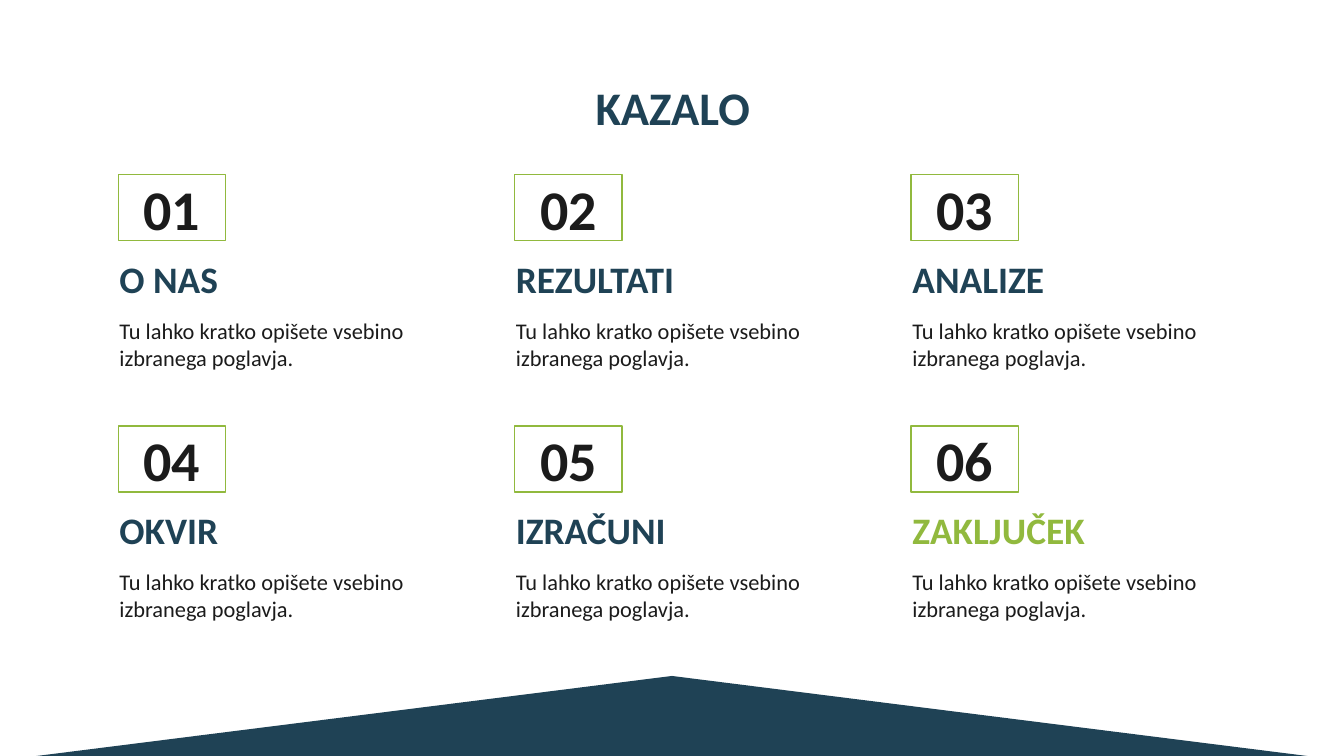
from pptx import Presentation
from pptx.dml.color import RGBColor
from pptx.enum.shapes import MSO_SHAPE as Shape
from pptx.enum.text import MSO_ANCHOR as Anchor, MSO_AUTO_SIZE as AutoSize, PP_ALIGN as Align
from pptx.util import Inches, Pt

COLORS = {"navy": "1F4255", "green": "91B93E", "ink": "1B1B1B"}
FONT = "Calibri"
TITLE = "KAZALO"
SUMMARY = "Tu lahko kratko opišete vsebino izbranega poglavja."
CHAPTERS = [
    ("O NAS", "navy"),
    ("REZULTATI", "navy"),
    ("ANALIZE", "navy"),
    ("OKVIR", "navy"),
    ("IZRAČUNI", "navy"),
    ("ZAKLJUČEK", "green"),
]
COLUMNS = 3
LEFT, COLUMN_STEP, COLUMN_WIDTH = 0.79, 2.95, 2.52
TOP, ROW_STEP = 1.3, 1.87
HEADING_OFFSET, SUMMARY_OFFSET = 0.61, 0.96


def color(name):
    return RGBColor.from_string(COLORS[name])


def write(shape, text, size, ink, bold=False, align=Align.LEFT, anchor=Anchor.TOP):
    frame = shape.text_frame
    frame.text = text
    frame.word_wrap = True
    frame.auto_size = AutoSize.NONE
    frame.vertical_anchor = anchor
    frame.margin_left = frame.margin_right = Inches(0.1)
    frame.margin_top = frame.margin_bottom = Inches(0.1)
    para = frame.paragraphs[0]
    para.alignment = align
    font = para.runs[0].font
    font.name, font.size, font.bold = FONT, Pt(size), bold
    font.color.rgb = color(ink)


def add_text(page, left, top, width, height, *args, **style):
    box = page.shapes.add_textbox(Inches(left), Inches(top), Inches(width), Inches(height))
    write(box, *args, **style)


def add_peak(page):
    peak = page.shapes.add_shape(
        Shape.ISOSCELES_TRIANGLE, 0, Inches(5.03), Inches(10), Inches(0.63))
    peak.shadow.inherit = False
    peak.fill.solid()
    peak.fill.fore_color.rgb = color("navy")
    peak.line.fill.background()


def add_title(page):
    title = page.shapes.title
    title.left, title.top = Inches(0.79), Inches(0.49)
    title.width, title.height = Inches(8.43), Inches(0.63)
    write(title, TITLE, 25, "navy", bold=True, align=Align.CENTER)


def add_number(page, left, top, number):
    frame = page.shapes.add_shape(
        Shape.RECTANGLE, Inches(left), Inches(top), Inches(0.8), Inches(0.49))
    frame.shadow.inherit = False
    frame.fill.background()
    frame.line.color.rgb = color("green")
    frame.line.width = Pt(0.75)
    write(frame, f"{number:02d}", 30, "ink", bold=True,
          align=Align.CENTER, anchor=Anchor.MIDDLE)


def main():
    deck = Presentation()
    deck.slide_width = Inches(10)
    deck.slide_height = deck.slide_width * 9 // 16
    page = deck.slides.add_slide(deck.slide_layouts[5])
    add_peak(page)
    add_title(page)
    for index, (heading, ink) in enumerate(CHAPTERS):
        row, column = divmod(index, COLUMNS)
        left = LEFT + column * COLUMN_STEP
        top = TOP + row * ROW_STEP
        add_number(page, left + 0.09, top, index + 1)
        add_text(page, left, top + HEADING_OFFSET, COLUMN_WIDTH, 0.43,
                 heading, 20, ink, bold=True, anchor=Anchor.BOTTOM)
        add_text(page, left, top + SUMMARY_OFFSET, COLUMN_WIDTH, 0.63,
                 SUMMARY, 12, "ink")
    deck.save("out.pptx")


if __name__ == "__main__":
    main()
